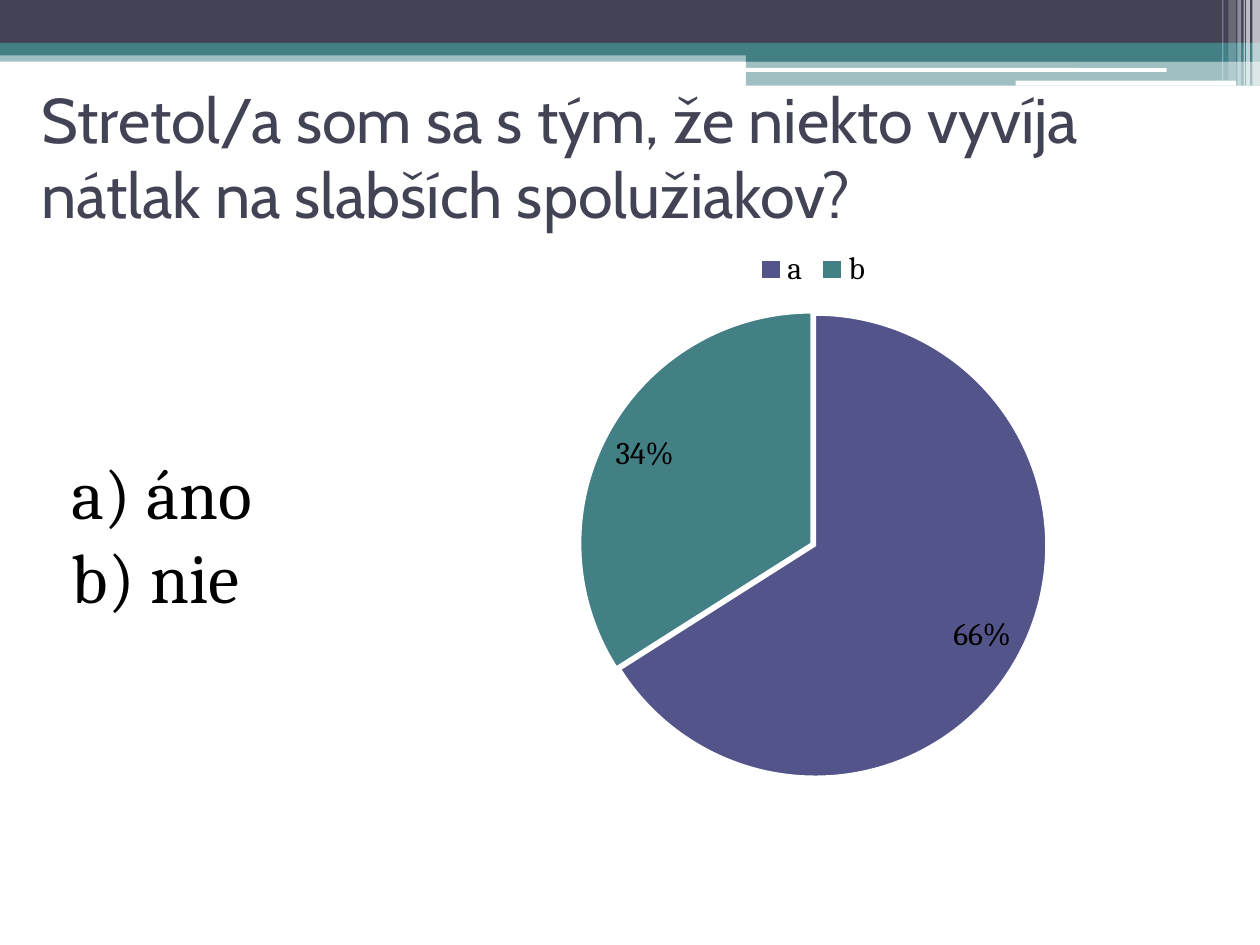
from lxml.etree import SubElement
from pptx import Presentation
from pptx.chart.data import CategoryChartData
from pptx.dml.color import RGBColor
from pptx.enum.chart import XL_CHART_TYPE as CT, XL_LABEL_POSITION as LP, XL_LEGEND_POSITION as LG
from pptx.enum.shapes import MSO_SHAPE as SH
from pptx.enum.text import MSO_ANCHOR as ANCHOR, MSO_AUTO_SIZE as FIT, PP_ALIGN as ALIGN
from pptx.oxml import parse_xml
from pptx.oxml.ns import nsdecls, qn
from pptx.util import Inches, Pt

DARK, TEAL, PURPLE, WHITE, BLACK = "424456", "438086", "53548A", "FFFFFF", "000000"

BANDS = [
    (SH.RECTANGLE, 0, 0.4, 10, 0.09, TEAL, 50),
    (SH.RECTANGLE, 0, 0, 10, 0.34, DARK, 100),
    (SH.RECTANGLE, 0, 0.34, 10, 0.1, TEAL, 100),
    (SH.RECTANGLE, 5.92, 0.39, 4.08, 0.1, TEAL, 100),
    (SH.RECTANGLE, 5.92, 0.48, 4.08, 0.2, TEAL, 50),
    (SH.ROUNDED_RECTANGLE, 5.91, 0.54, 3.35, 0.03, WHITE, 100),
    (SH.ROUNDED_RECTANGLE, 8.06, 0.64, 1.75, 0.04, WHITE, 100),
]
STRIPES = [
    (9.94, 0.06, 0.68, 65), (9.89, 0.03, 0.68, 65), (9.87, 0.01, 0.68, 60),
    (9.82, 0.03, 0.68, 40), (9.75, 0.06, 0.64, 20), (9.7, 0.01, 0.64, 30),
]


def rgb(value):
    """Return the colour for a hex string."""
    return RGBColor.from_string(value)


def style(font, name, size, color):
    """Set the name, size and colour of a font."""
    font.name, font.size = name, Pt(size)
    font.color.rgb = rgb(color)


def place(s, x, y, w, h):
    """Move and size a shape in inches."""
    s.left, s.top, s.width, s.height = map(Inches, (x, y, w, h))


def add_band(slide, kind, x, y, w, h, color, opacity):
    """Add a borderless band with the given opacity in percent."""
    s = slide.shapes.add_shape(kind, *map(Inches, (x, y, w, h)))
    s.shadow.inherit = False
    s.line.fill.background()
    s.fill.solid()
    s.fill.fore_color.rgb = rgb(color)
    if opacity < 100:
        clr = s.fill._xPr.find(".//" + qn("a:srgbClr"))
        SubElement(clr, qn("a:alpha"), val=str(opacity * 1000))


def add_title(slide, text):
    """Fill and format the title placeholder."""
    s = slide.shapes.title
    place(s, 0.23, 0.55, 9.77, 1.37)
    tf = s.text_frame
    tf.word_wrap, tf.auto_size, tf.vertical_anchor = True, FIT.NONE, ANCHOR.MIDDLE
    p = tf.paragraphs[0]
    p.alignment = ALIGN.LEFT
    r = p.add_run()
    r.text = text
    style(r.font, "Cabin", 36, DARK)


def add_answers(slide, answers):
    """Fill the body placeholder with a lettered list."""
    s = slide.placeholders[1]
    place(s, 0.47, 3.52, 2.07, 1.45)
    tf = s.text_frame
    tf.word_wrap, tf.auto_size, tf.vertical_anchor = True, FIT.SHAPE_TO_FIT_TEXT, ANCHOR.TOP
    for i, answer in enumerate(answers):
        p = tf.add_paragraph() if i else tf.paragraphs[0]
        p.space_before = Pt(0)
        pPr = p._p.get_or_add_pPr()
        pPr.set("marL", str(Inches(0.38)))
        pPr.set("indent", str(Inches(-0.38)))
        SubElement(pPr, qn("a:buFont"), typeface="+mj-lt")
        SubElement(pPr, qn("a:buAutoNum"), type="alphaLcParenR")
        r = p.add_run()
        r.text = answer
        style(r.font, "Cambria", 40, BLACK)


def add_pie(slide, shares, colors):
    """Add the pie chart with percent labels and a legend on top."""
    data = CategoryChartData()
    data.categories = list(shares)
    data.add_series("Series 1", shares.values())
    frame = slide.shapes.add_chart(CT.PIE, *map(Inches, (3.12, 1.87, 6.67, 4.44)), data)
    chart = frame.chart
    style(chart.font, "Cambria", 18, BLACK)
    chart.has_title = False
    chart.has_legend = True
    chart.legend.position, chart.legend.include_in_layout = LG.TOP, False
    plot = chart.plots[0]
    plot.vary_by_categories = True
    plot.has_data_labels = True
    labels = plot.data_labels
    labels.show_percentage, labels.show_value = True, False
    labels.number_format, labels.number_format_is_linked = "0%", False
    labels.position = LP.INSIDE_END
    style(labels.font, "Cambria", 18, BLACK)
    series = plot.series[0]
    for i, color in enumerate(colors):
        fmt = series.points[i].format
        fmt.fill.solid()
        fmt.fill.fore_color.rgb = rgb(color)
        fmt.line.color.rgb = rgb(WHITE)
        fmt.line.width = Pt(1)
    explosion = parse_xml(f'<c:explosion {nsdecls("c")} val="1"/>')
    series._element.get_or_add_spPr().addnext(explosion)


def main():
    """Build the slide and save it."""
    prs = Presentation()
    prs.slide_width, prs.slide_height = Inches(10), Inches(7.5)
    slide = prs.slides.add_slide(prs.slide_layouts[1])
    for band in BANDS:
        add_band(slide, *band)
    for x, w, h, opacity in STRIPES:
        add_band(slide, SH.RECTANGLE, x, 0, w, h, WHITE, opacity)
    add_title(slide, "Stretol/a som sa s tým, že niekto vyvíja nátlak na slabších spolužiakov?")
    add_pie(slide, {"a": 66, "b": 34}, [PURPLE, TEAL])
    add_answers(slide, [" áno", " nie"])
    prs.save("out.pptx")


if __name__ == "__main__":
    main()
